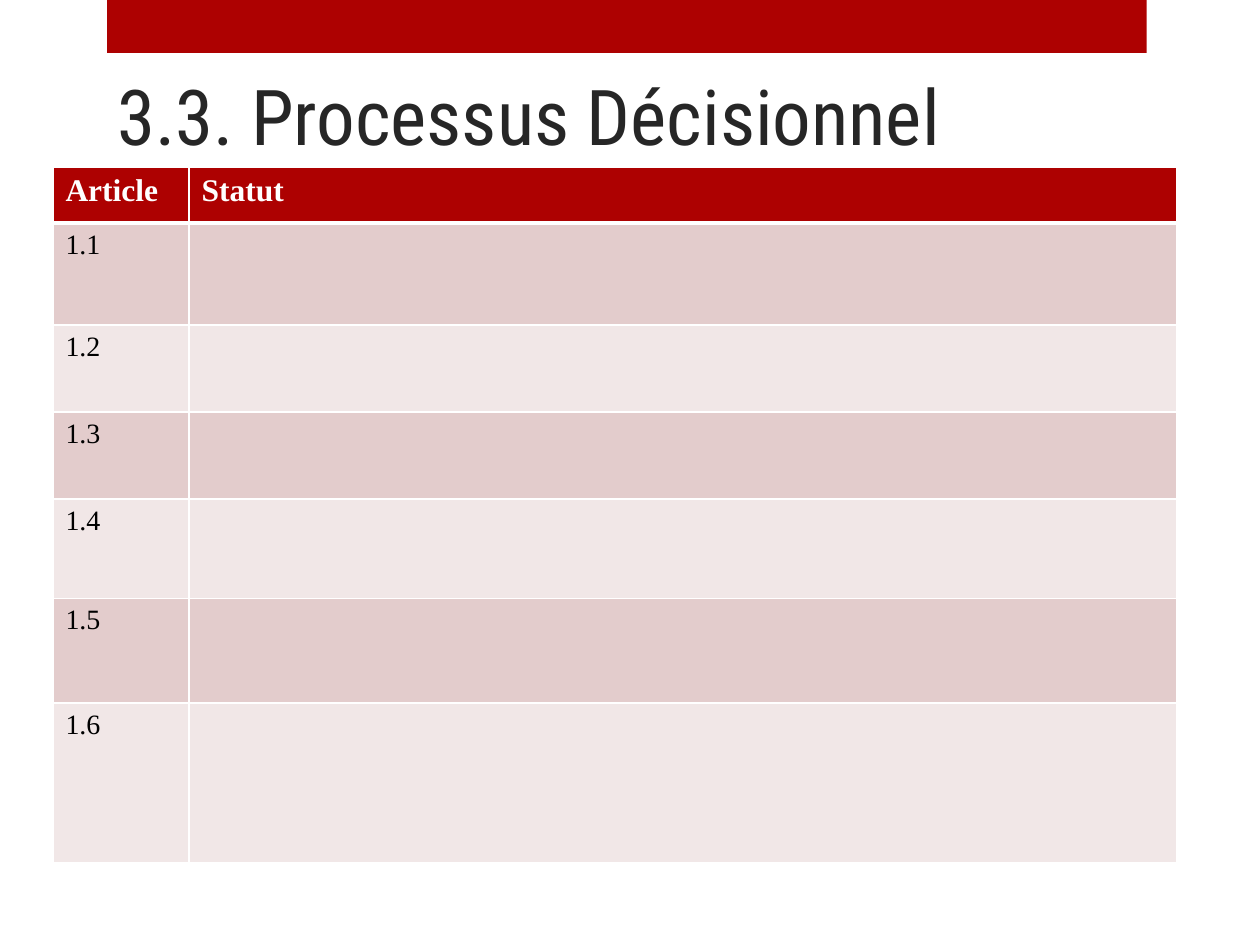
from lxml import etree
from pptx import Presentation
from pptx.dml.color import RGBColor
from pptx.enum.shapes import MSO_SHAPE
from pptx.enum.text import MSO_ANCHOR, MSO_AUTO_SIZE, PP_ALIGN
from pptx.oxml.ns import qn
from pptx.util import Inches, Pt

RECT = MSO_SHAPE.RECTANGLE
BOTTOM = MSO_ANCHOR.BOTTOM
LEFT = PP_ALIGN.LEFT
FIXED = MSO_AUTO_SIZE.NONE
RED, WHITE, BLACK, GREY = "AD0101", "FFFFFF", "000000", "262626"
BANDS = ["E3CCCC", "F1E7E7"]


def paint(item, tint):
    item.fill.solid()
    item.fill.fore_color.rgb = RGBColor.from_string(tint)


def style(font, tint, form):
    font.color.rgb = RGBColor.from_string(tint)
    for name, value in form.items():
        setattr(font, name, value)


deck = Presentation()
deck.slide_width, deck.slide_height = Inches(10), Inches(7.5)
slide = deck.slides.add_slide(deck.slide_layouts[5])

bar = slide.shapes.add_shape(RECT, Inches(0.85), 0, Inches(8.25), Inches(0.42))
bar.shadow.inherit = False
paint(bar, RED)
bar.line.fill.background()

title = slide.shapes.title
place = {"left": 0.83, "top": -0.42, "width": 7.42, "height": 1.75}
for name, value in place.items():
    setattr(title, name, Inches(value))
frame = title.text_frame
frame.text = "3.3. Processus Décisionnel"
for name, value in {"vertical_anchor": BOTTOM, "auto_size": FIXED, "word_wrap": True}.items():
    setattr(frame, name, value)
frame.paragraphs[0].alignment = LEFT
style(frame.paragraphs[0].runs[0].font, GREY, {"name": "Roboto Condensed", "size": Pt(44)})

rows = [["Article", "Statut"]] + [[f"1.{n}", ""] for n in range(1, 7)]
tall = [0.44, 0.81, 0.69, 0.69, 0.79, 0.83, 1.27]
wide = [1.08, 7.84]
grid = slide.shapes.add_table(
    len(tall), len(wide), Inches(0.42), Inches(1.33), Inches(sum(wide)), Inches(sum(tall))
).table
grid.horz_banding = False
for col, size in zip(grid.columns, wide):
    col.width = Inches(size)
for row, size in zip(grid.rows, tall):
    row.height = Inches(size)

head = {"name": "Times New Roman", "size": Pt(18), "bold": True}
body = {"name": "Times New Roman", "size": Pt(16), "bold": False}
for r, texts in enumerate(rows):
    for c, text in enumerate(texts):
        cell = grid.cell(r, c)
        props = cell._tc.get_or_add_tcPr()
        for side in ["L", "R", "T", "B"]:
            thick = (r == 0 and side == "B") or (r == 1 and side == "T")
            line = etree.SubElement(props, qn(f"a:ln{side}"), w=str(Pt(3 if thick else 1)))
            fill = etree.SubElement(line, qn("a:solidFill"))
            etree.SubElement(fill, qn("a:srgbClr"), val=WHITE)
        paint(cell, BANDS[(r - 1) % 2] if r else RED)
        if text:
            cell.text = text
            font = cell.text_frame.paragraphs[0].runs[0].font
            style(font, BLACK if r else WHITE, body if r else head)

deck.save("out.pptx")
